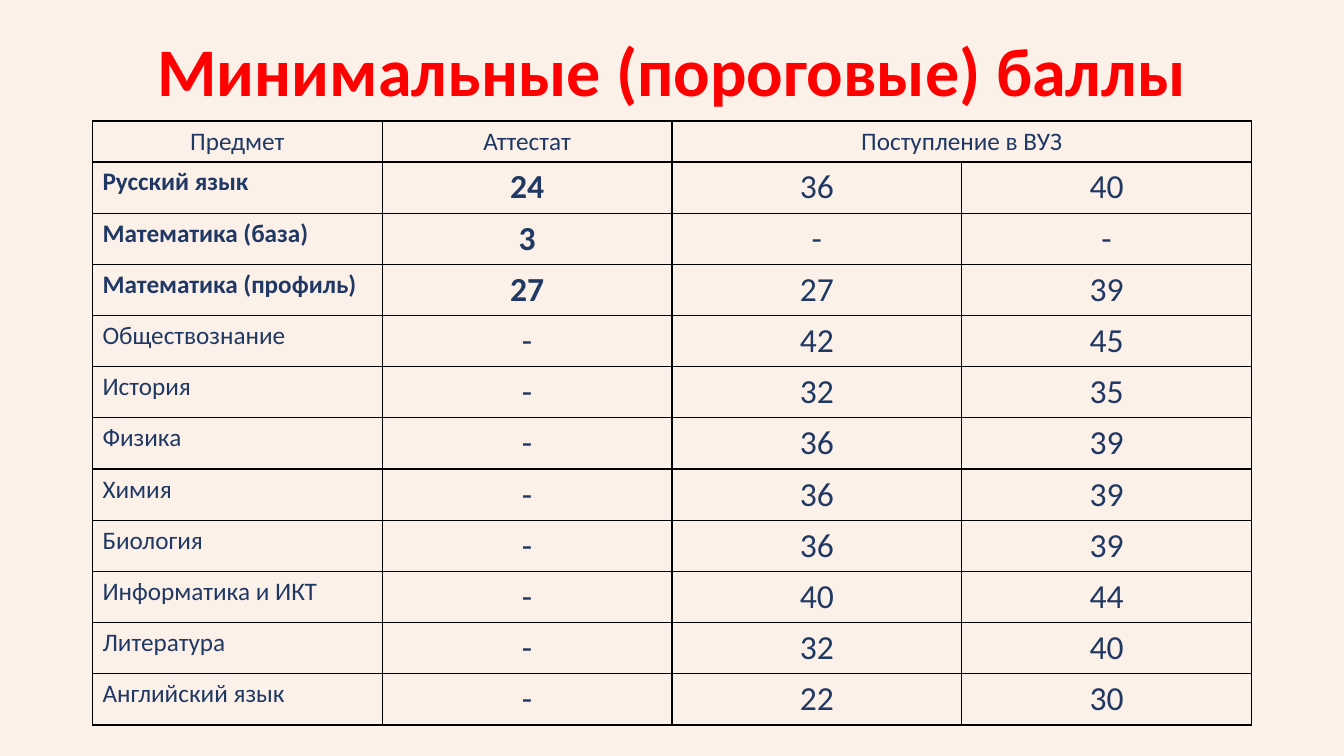
import pptx
import pptx.util
import pptx.dml.color
import pptx.enum.text
import pptx.oxml
import pptx.oxml.ns

Cm, Pt = pptx.util.Cm, pptx.util.Pt
RGBColor = pptx.dml.color.RGBColor
PP_ALIGN = pptx.enum.text.PP_ALIGN

TITLE = "Минимальные (пороговые) баллы"
HEADER = ("Предмет", "Аттестат", "Поступление в ВУЗ")
SCORES = [
    ("Русский язык", "24", "36", "40"),
    ("Математика (база)", "3", "-", "-"),
    ("Математика (профиль)", "27", "27", "39"),
    ("Обществознание", "-", "42", "45"),
    ("История", "-", "32", "35"),
    ("Физика", "-", "36", "39"),
    ("Химия", "-", "36", "39"),
    ("Биология", "-", "36", "39"),
    ("Информатика и ИКТ", "-", "40", "44"),
    ("Литература", "-", "32", "40"),
    ("Английский язык", "-", "22", "30"),
]
REQUIRED_ROWS = 3

FONT = "Calibri"
CREAM = RGBColor(0xFC, 0xF1, 0xE9)
RED = RGBColor(0xFF, 0x00, 0x00)
NAVY = RGBColor(0x20, 0x38, 0x64)
BLACK = RGBColor(0x00, 0x00, 0x00)

LEFT, WIDTH = Cm(2.33), Cm(29.21)
TABLE_TOP, HEADER_HEIGHT, ROW_HEIGHT = Cm(3.05), Cm(1.03), Cm(1.29)


def add_run(p, text, size, color, bold):
    r = p.add_run()
    r.text = text
    r.font.name = FONT
    r.font.size = Pt(size)
    r.font.bold = bold
    r.font.color.rgb = color


def add_borders(cell):
    tcPr = cell._tc.get_or_add_tcPr()
    for i, side in enumerate(("lnL", "lnR", "lnT", "lnB")):
        tcPr.insert(i, pptx.oxml.parse_xml(
            f'<a:{side} {pptx.oxml.ns.nsdecls("a")} w="{Pt(1)}">'
            f'<a:solidFill><a:srgbClr val="{BLACK}"/></a:solidFill></a:{side}>'))


def fill_cell(cell, text, size, bold=False, align=PP_ALIGN.CENTER):
    p = cell.text_frame.paragraphs[0]
    p.alignment = align
    add_run(p, text, size, NAVY, bold)


def add_title(s):
    title = s.shapes.title
    title.left, title.top, title.width, title.height = LEFT, Cm(1.02), WIDTH, Cm(1.7)
    tf = title.text_frame
    tf.auto_size = pptx.enum.text.MSO_AUTO_SIZE.NONE
    tf.vertical_anchor = pptx.enum.text.MSO_ANCHOR.MIDDLE
    p = tf.paragraphs[0]
    p.alignment = PP_ALIGN.CENTER
    p.line_spacing = 0.9
    add_run(p, TITLE, 48.6, RED, True)


def add_scores(s):
    rows, cols = len(SCORES) + 1, len(SCORES[0])
    height = HEADER_HEIGHT + ROW_HEIGHT * len(SCORES)
    table = s.shapes.add_table(rows, cols, LEFT, TABLE_TOP, WIDTH, height).table
    table.first_row = table.horz_banding = False
    for row in table.rows:
        row.height = ROW_HEIGHT
    table.rows[0].height = HEADER_HEIGHT
    for cell in table.iter_cells():
        cell.fill.background()
        add_borders(cell)
    table.cell(0, 2).merge(table.cell(0, 3))
    for col, text in enumerate(HEADER):
        fill_cell(table.cell(0, col), text, 18)
    for row, (subject, *scores) in enumerate(SCORES, 1):
        required = row <= REQUIRED_ROWS
        fill_cell(table.cell(row, 0), subject, 18, required, PP_ALIGN.LEFT)
        for col, score in enumerate(scores, 1):
            fill_cell(table.cell(row, col), score, 24, required and col == 1)


def main():
    """Build the slide of minimum exam scores."""
    prs = pptx.Presentation()
    prs.slide_width, prs.slide_height = Cm(33.87), Cm(19.05)
    s = prs.slides.add_slide(prs.slide_layouts[5])
    s.background.fill.solid()
    s.background.fill.fore_color.rgb = CREAM
    add_title(s)
    add_scores(s)
    prs.save("out.pptx")


if __name__ == "__main__":
    main()
